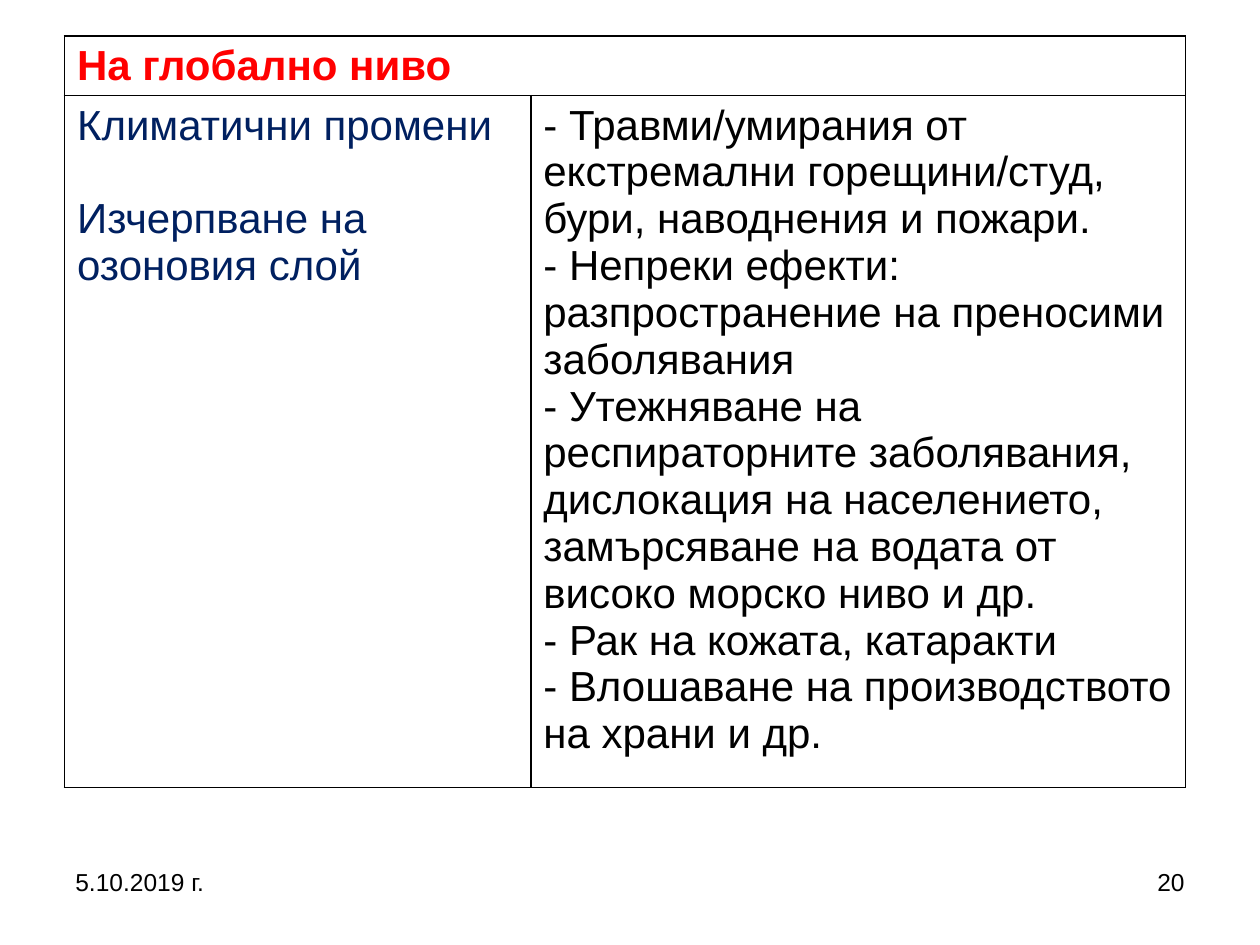
from lxml import etree
from pptx import Presentation
from pptx.dml.color import RGBColor
from pptx.enum.text import PP_ALIGN
from pptx.oxml.ns import qn
from pptx.util import Cm, Pt

LEFT, RIGHT = PP_ALIGN.LEFT, PP_ALIGN.RIGHT
FONT = "Arial"
COLORS = {"heading": "FF0000", "problem": "002060", "text": "000000",
          "border": "000000", "cell": "FFFFFF"}

HEADING = ["На глобално ниво"]
PROBLEMS = ["Климатични промени", "Изчерпване на озоновия слой"]
EFFECTS = [
    "- Травми/умирания от екстремални горещини/студ, бури, наводнения и пожари.",
    "- Непреки ефекти: разпространение на преносими заболявания",
    "- Утежняване на респираторните заболявания, дислокация на населението, "
    "замърсяване на водата от високо морско ниво и др.",
    "- Рак на кожата, катаракти",
    "- Влошаване на производството на храни и др.",
]


def write(tf, lines, size, color, bold=False, align=LEFT, gap=0):
    for i, line in enumerate(lines):
        p = tf.add_paragraph() if i else tf.paragraphs[0]
        p.text = line
        p.alignment = align
        p.space_before = Pt(gap if i else 0)
        p.font.name = FONT
        p.font.size = Pt(size)
        p.font.bold = bold
        p.font.color.rgb = RGBColor.from_string(COLORS[color])


def style_cell(cell):
    cell.fill.solid()
    cell.fill.fore_color.rgb = RGBColor.from_string(COLORS["cell"])
    tc_pr = cell._tc.get_or_add_tcPr()
    for i, side in enumerate(("lnL", "lnR", "lnT", "lnB")):
        ln = etree.Element(qn(f"a:{side}"), w=str(Pt(1)))
        fill = etree.SubElement(ln, qn("a:solidFill"))
        etree.SubElement(fill, qn("a:srgbClr"), val=COLORS["border"])
        tc_pr.insert(i, ln)


def add_effects_table(slide):
    widths, heights = (Cm(9.4), Cm(13.2)), (Cm(1.2), Cm(13.94))
    table = slide.shapes.add_table(2, 2, Cm(1.3), Cm(0.73),
                                   sum(widths), sum(heights)).table
    table.first_row = table.horz_banding = False
    for column, width in zip(table.columns, widths):
        column.width = width
    for row, height in zip(table.rows, heights):
        row.height = height
    for cell in table.iter_cells():
        style_cell(cell)
    table.cell(0, 0).merge(table.cell(0, 1))
    write(table.cell(0, 0).text_frame, HEADING, 24, "heading", bold=True)
    write(table.cell(1, 0).text_frame, PROBLEMS, 24, "problem", gap=26.8)
    write(table.cell(1, 1).text_frame, EFFECTS, 24, "text")


def add_footer(slide, left, text, align):
    sp = slide.shapes.add_textbox(left, Cm(17.35), Cm(5.93), Cm(1.32))
    sp.text_frame.word_wrap = True
    write(sp.text_frame, [text], 14, "text", align=align)


def main():
    prs = Presentation()
    prs.slide_width, prs.slide_height = Cm(25.4), Cm(19.05)
    slide = prs.slides.add_slide(prs.slide_layouts[6])
    add_effects_table(slide)
    add_footer(slide, Cm(1.27), "5.10.2019 г.", LEFT)
    add_footer(slide, Cm(18.2), "20", RIGHT)
    prs.save("out.pptx")


if __name__ == "__main__":
    main()
